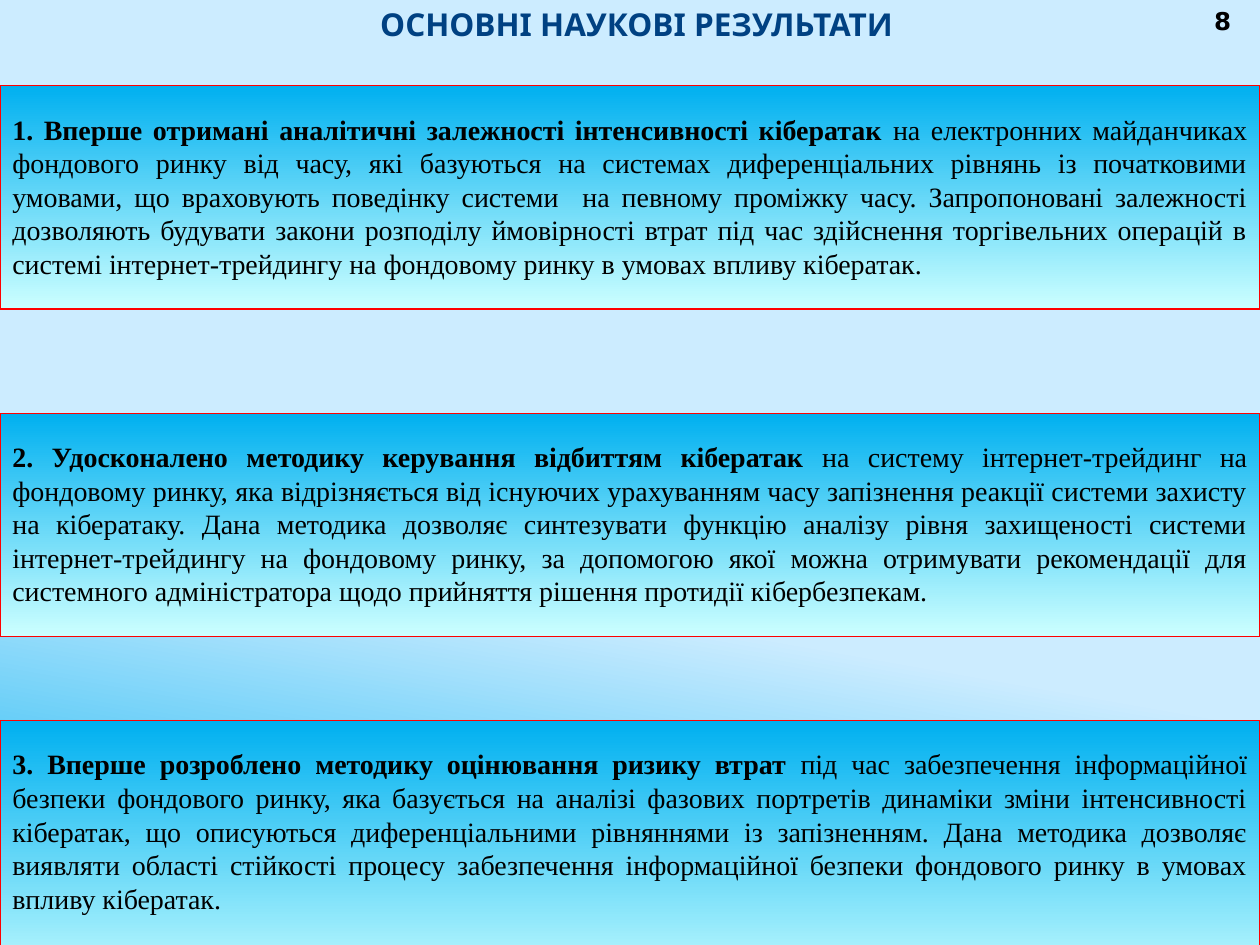
from copy import deepcopy
from dataclasses import dataclass

from pptx import Presentation
from pptx.dml.color import RGBColor
from pptx.enum.shapes import MSO_SHAPE
from pptx.enum.text import MSO_ANCHOR, PP_ALIGN
from pptx.oxml.ns import qn
from pptx.util import Cm, Pt

RECTANGLE = MSO_SHAPE.RECTANGLE
TOP = MSO_ANCHOR.TOP
CENTER, JUSTIFY = PP_ALIGN.CENTER, PP_ALIGN.JUSTIFY

PAGE_WIDTH, PAGE_HEIGHT = 25.4, 19.05
PAGE_STOPS = [(0, "00B0F0"), (0.38, "CCECFF"), (0.92, "CCECFF"), (1, "CCECFF")]
PANEL_STOPS = [(0, "00B0F0"), (1, "CCFFFF")]

TITLE_FONT = {"name": "Noto Sans", "size": Pt(18), "bold": True}
NUMBER_FONT = {"name": "DejaVu Sans", "size": Pt(14), "bold": True}
LEAD_FONT = {"name": "Times New Roman", "size": Pt(16), "bold": True}
BODY_FONT = {**LEAD_FONT, "bold": False}
PANEL_FRAME = {
    "word_wrap": True, "vertical_anchor": TOP,
    "margin_left": Cm(0.25), "margin_right": Cm(0.25),
    "margin_top": Cm(0.53), "margin_bottom": Cm(0.53),
}


@dataclass
class Label:
    text: str
    left: float
    top: float
    width: float
    height: float
    font: dict
    color: str


@dataclass
class Result:
    top: float
    height: float
    lead: str
    body: str


LABELS = [
    Label("ОСНОВНІ НАУКОВІ РЕЗУЛЬТАТИ", 2.74, -0.03, 20.19, 1.02, TITLE_FONT, "004182"),
    Label("8", 23.9, 0, 1.5, 0.86, NUMBER_FONT, "000000"),
]

RESULTS = [
    Result(
        1.73, 4.5,
        "1. Вперше отримані аналітичні залежності інтенсивності кібератак ",
        "на електронних майданчиках фондового ринку від часу, які базуються на "
        "системах диференціальних рівнянь із початковими умовами, що враховують "
        "поведінку системи  на певному проміжку часу. Запропоновані залежності "
        "дозволяють будувати закони розподілу ймовірності втрат під час здійснення "
        "торгівельних операцій в системі інтернет-трейдингу на фондовому ринку в "
        "умовах впливу кібератак.",
    ),
    Result(
        8.33, 4.5,
        "2. Удосконалено методику керування відбиттям кібератак ",
        "на систему інтернет-трейдинг на фондовому ринку, яка відрізняється від "
        "існуючих урахуванням часу запізнення реакції системи захисту на кібератаку. "
        "Дана методика дозволяє синтезувати функцію аналізу рівня захищеності системи "
        "інтернет-трейдингу на фондовому ринку, за допомогою якої можна отримувати "
        "рекомендації для системного адміністратора щодо прийняття рішення протидії "
        "кібербезпекам.",
    ),
    Result(
        14.53, 5.61,
        "3. Вперше розроблено методику оцінювання ризику втрат ",
        "під час забезпечення інформаційної безпеки фондового ринку, яка базується на "
        "аналізі фазових портретів динаміки зміни інтенсивності кібератак, що "
        "описуються диференціальними рівняннями із запізненням. Дана методика дозволяє "
        "виявляти області стійкості процесу забезпечення інформаційної безпеки "
        "фондового ринку в умовах впливу кібератак.",
    ),
]


def rgb(value: str) -> RGBColor:
    return RGBColor.from_string(value)


def apply_format(target, values: dict) -> None:
    for name, value in values.items():
        setattr(target, name, value)


def paint_gradient(owner, fill, stops: list, clockwise: float) -> None:
    fill.gradient()
    fill.gradient_angle = 360 - clockwise
    stop_list = next(owner.element.iter(qn("a:gsLst")))
    while len(stop_list) < len(stops):
        stop_list.append(deepcopy(stop_list[-1]))
    for stop, (position, color) in zip(fill.gradient_stops, stops):
        stop.position = position
        stop.color.rgb = rgb(color)


def add_span(para, text: str, font: dict, color: str) -> None:
    span = para.add_run()
    span.text = text
    apply_format(span.font, font)
    span.font.color.rgb = rgb(color)


def add_label(page, label: Label) -> None:
    box = page.shapes.add_textbox(
        Cm(label.left), Cm(label.top), Cm(label.width), Cm(label.height))
    box.text_frame.word_wrap = True
    para = box.text_frame.paragraphs[0]
    para.alignment = CENTER
    add_span(para, label.text, label.font, label.color)


def add_result(page, result: Result) -> None:
    panel = page.shapes.add_shape(
        RECTANGLE, Cm(0), Cm(result.top), Cm(PAGE_WIDTH), Cm(result.height))
    panel.shadow.inherit = False
    paint_gradient(panel, panel.fill, PANEL_STOPS, 90)
    panel.line.color.rgb = rgb("FF0000")
    panel.line.width = Pt(0.75)
    apply_format(panel.text_frame, PANEL_FRAME)
    para = panel.text_frame.paragraphs[0]
    apply_format(para, {"alignment": JUSTIFY, "space_after": Pt(12)})
    add_span(para, result.lead, LEAD_FONT, "000000")
    add_span(para, result.body, BODY_FONT, "000000")


def main() -> None:
    deck = Presentation()
    deck.slide_width, deck.slide_height = Cm(PAGE_WIDTH), Cm(PAGE_HEIGHT)
    page = deck.slides.add_slide(deck.slide_layouts[6])

    # Background
    paint_gradient(page, page.background.fill, PAGE_STOPS, 280)

    # Title and page number
    for label in LABELS:
        add_label(page, label)

    # Result panels
    for result in RESULTS:
        add_result(page, result)

    deck.save("out.pptx")


if __name__ == "__main__":
    main()
